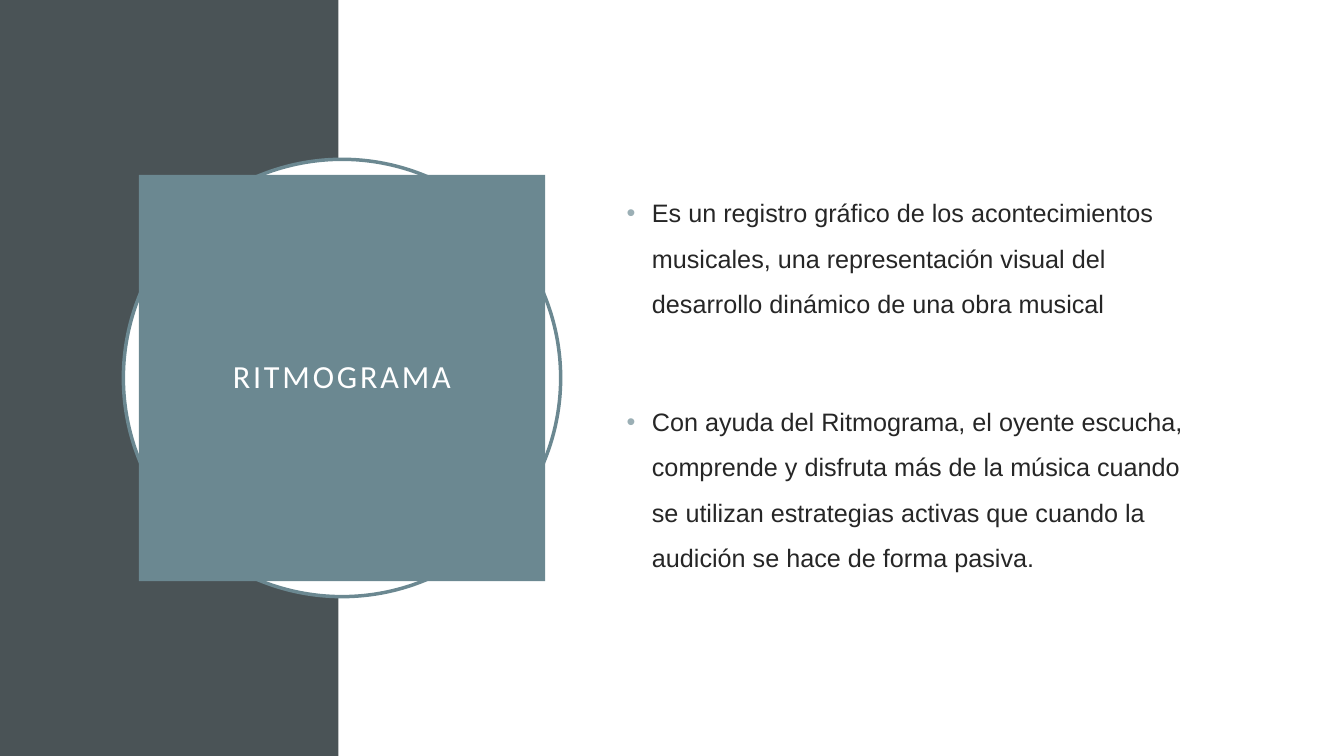
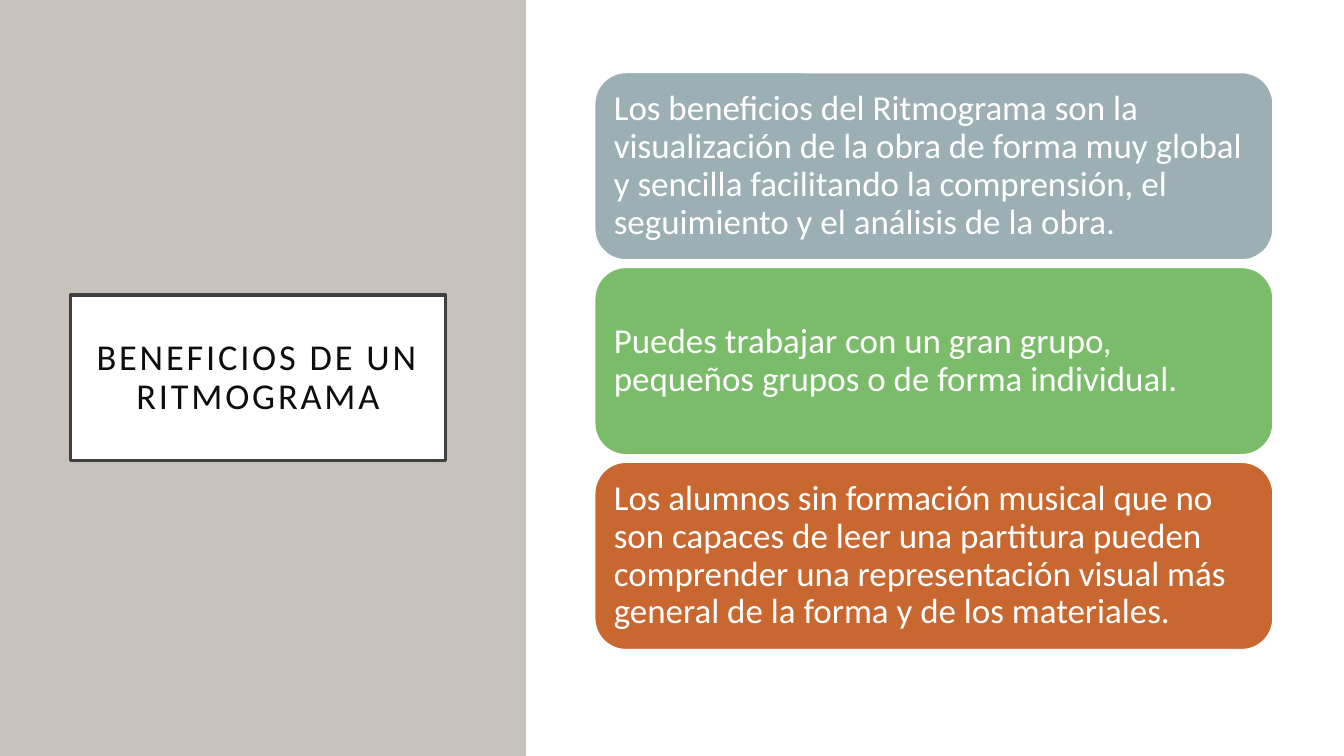
from lxml import etree
from pptx import Presentation
from pptx.dml.color import RGBColor
from pptx.enum.shapes import MSO_SHAPE
from pptx.enum.text import MSO_ANCHOR, PP_ALIGN
from pptx.oxml.ns import qn
from pptx.util import Cm, Pt

RECT, OVAL, ROUNDED = MSO_SHAPE.RECTANGLE, MSO_SHAPE.OVAL, MSO_SHAPE.ROUNDED_RECTANGLE
MIDDLE, LEFT, CENTER = MSO_ANCHOR.MIDDLE, PP_ALIGN.LEFT, PP_ALIGN.CENTER

# Content
DEFINITION_TITLE = "RITMOGRAMA"
DEFINITION = [
    "Es un registro gráfico de los acontecimientos musicales, una representación "
    "visual del desarrollo dinámico de una obra musical",
    "Con ayuda del Ritmograma, el oyente escucha, comprende y disfruta más de la "
    "música cuando se utilizan estrategias activas que cuando la audición se hace "
    "de forma pasiva.",
]
BENEFITS_TITLE = "BENEFICIOS DE UN RITMOGRAMA"
BENEFITS = [
    ("9BAFB5", "Los beneficios del Ritmograma son la visualización de la obra de forma "
               "muy global y sencilla facilitando la comprensión, el seguimiento y el "
               "análisis de la obra."),
    ("7ABC69", "Puedes trabajar con un gran grupo, pequeños grupos o de forma individual."),
    ("C96731", "Los alumnos sin formación musical que no son capaces de leer una partitura "
               "pueden comprender una representación visual más general de la forma y de "
               "los materiales."),
]

# Shared look
WIDTH, HEIGHT = 33.87, 19.05
WHITE, SLATE, TEAL, SAND = "FFFFFF", "4A5356", "6B8891", "C6C1BA"
BORDER, TITLE_INK, BODY_INK, BULLET = "404040", "0D0D0D", "262626", "9BAFB5"
TITLE_FONT, BODY_FONT = "Calibri", "Arial"


def rgb(value):
    return RGBColor.from_string(value)


def add_box(page, kind, left, top, width, height, fill, line=None, line_width=2.5):
    box = page.shapes.add_shape(kind, Cm(left), Cm(top), Cm(width), Cm(height))
    box.shadow.inherit = False
    box.fill.solid()
    box.fill.fore_color.rgb = rgb(fill)
    if line:
        box.line.color.rgb = rgb(line)
        box.line.width = Pt(line_width)
    else:
        box.line.fill.background()
    return box


def set_frame(box, inset_x, inset_y):
    frame = box.text_frame
    frame.word_wrap = True
    frame.vertical_anchor = MIDDLE
    frame.margin_left = frame.margin_right = Cm(inset_x)
    frame.margin_top = frame.margin_bottom = Cm(inset_y)
    return frame


def write(para, text, font, size, color, align=LEFT, spacing=0.9):
    para.text = text
    para.alignment = align
    para.line_spacing = spacing
    para.font.name = font
    para.font.size = Pt(size)
    para.font.color.rgb = rgb(color)


def write_title(box, text, size, color):
    para = set_frame(box, 0.5, 0.5).paragraphs[0]
    write(para, text, TITLE_FONT, size, color, CENTER)
    for span in para.runs:
        span.font._element.set("spc", "200")


def add_bullet(para):
    props = para._p.get_or_add_pPr()
    props.set("marL", str(Cm(0.64)))
    props.set("indent", str(-Cm(0.64)))
    color = etree.SubElement(props, qn("a:buClr"))
    etree.SubElement(color, qn("a:srgbClr")).set("val", BULLET)
    etree.SubElement(props, qn("a:buFont")).set("typeface", BODY_FONT)
    etree.SubElement(props, qn("a:buChar")).set("char", "•")
    # Bullet settings come before the default run properties
    defaults = props.find(qn("a:defRPr"))
    if defaults is not None:
        props.append(defaults)


def add_page(deck, panel_width, panel_color):
    page = deck.slides.add_slide(deck.slide_layouts[6])
    page.background.fill.solid()
    page.background.fill.fore_color.rgb = rgb(WHITE)
    add_box(page, RECT, 0, 0, panel_width, HEIGHT, panel_color)
    return page


def build_definition(deck):
    page = add_page(deck, 8.53, SLATE)

    # Title square centred on its ring
    center_x, center_y = 8.62, HEIGHT / 2
    for kind, size, fill, line in ((OVAL, 11.02, WHITE, TEAL), (RECT, 10.24, TEAL, None)):
        box = add_box(page, kind, center_x - size / 2, center_y - size / 2,
                      size, size, fill, line)
    write_title(box, DEFINITION_TITLE, 23, WHITE)

    # Bulleted definition
    body = page.shapes.add_textbox(Cm(15.54), Cm(3.89), Cm(14.78), Cm(11.25))
    frame = set_frame(body, 0.25, 0.13)
    for index, text in enumerate(DEFINITION):
        para = frame.add_paragraph() if index else frame.paragraphs[0]
        write(para, text, BODY_FONT, 18, BODY_INK, spacing=1.5)
        para.space_before = Pt(52 if index else 10)
        add_bullet(para)


def build_benefits(deck):
    page = add_page(deck, 13.26, SAND)
    title = add_box(page, RECT, 1.78, 7.44, 9.45, 4.17, WHITE, BORDER)
    write_title(title, BENEFITS_TITLE, 26, TITLE_INK)

    # Stack of cards
    left, top, width, height, gap = 14.99, 1.83, 17.09, 4.72, 0.19
    for index, (color, text) in enumerate(BENEFITS):
        card = add_box(page, ROUNDED, left, top + index * (height + gap),
                       width, height, color, WHITE, 1)
        write(set_frame(card, 0.25, 0.25).paragraphs[0], text, TITLE_FONT, 25, WHITE)


def main():
    deck = Presentation()
    deck.slide_width, deck.slide_height = Cm(WIDTH), Cm(HEIGHT)
    build_definition(deck)
    build_benefits(deck)
    deck.save("out.pptx")


if __name__ == "__main__":
    main()
